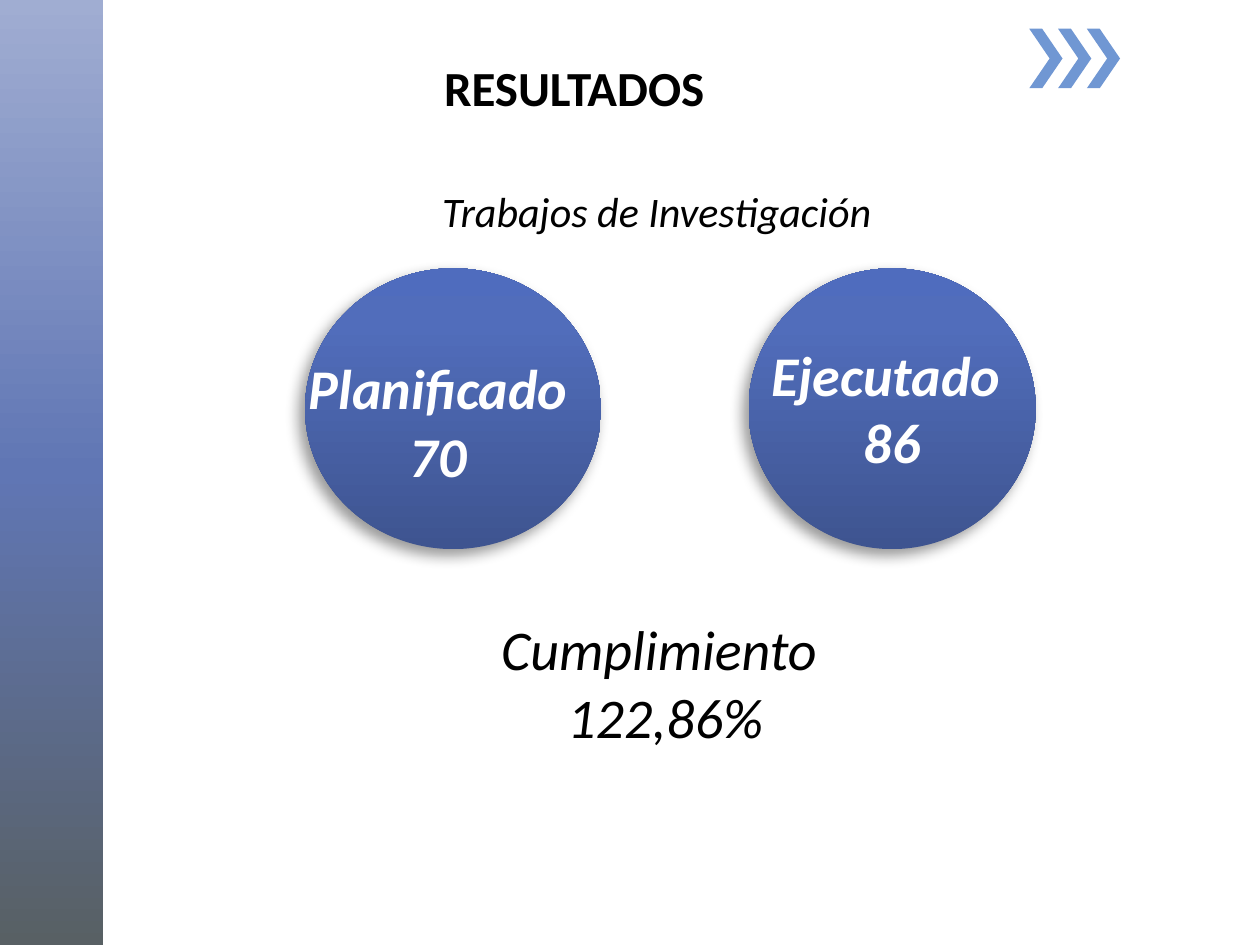
import pptx
import pptx.dml.color
import pptx.enum.shapes
import pptx.enum.text
import pptx.oxml
import pptx.oxml.ns
import pptx.util
from lxml import etree

Cm = pptx.util.Cm
SHAPES = pptx.enum.shapes.MSO_SHAPE
TEXT_WIDTH = 18.39
BAR_STOPS = [(0, "A0ADD2"), (50, "6076B4"), (100, "586064")]
CIRCLE_STOPS = [(0, "3E5490"), (80, "516DBB"), (100, "4F6CBE")]


def color(hex_value):
    """Return the colour for a hex string."""
    return pptx.dml.color.RGBColor.from_string(hex_value)


def add_element(parent, tag, **attributes):
    """Append a DrawingML element and return it."""
    element = etree.SubElement(parent, pptx.oxml.ns.qn(tag))
    for key, value in attributes.items():
        element.set(key, str(value))
    return element


def add_gradient_shape(slide, kind, box, stops, angle):
    """Add a borderless shape with a linear gradient."""
    shape = slide.shapes.add_shape(kind, *map(Cm, box))
    shape.shadow.inherit = False
    shape.line.fill.background()
    shape.fill.gradient()
    shape.fill.gradient_angle = angle
    stop_list = shape._element.spPr.find(".//" + pptx.oxml.ns.qn("a:gsLst"))
    for old_stop in list(stop_list):
        stop_list.remove(old_stop)
    for position, hex_value in stops:
        stop = add_element(stop_list, "a:gs", pos=position * 1000)
        add_element(stop, "a:srgbClr", val=hex_value)
    return shape


def add_circle(slide, left, width):
    """Add a result circle with a soft shadow at its lower left."""
    circle = add_gradient_shape(
        slide, SHAPES.OVAL, (left, 5.41, width, 5.66), CIRCLE_STOPS, 90)
    effects = circle._element.spPr.find(pptx.oxml.ns.qn("a:effectLst"))
    shadow = add_element(
        effects, "a:outerShdw", blurRad=pptx.util.Pt(8),
        dist=pptx.util.Pt(5), dir=135 * 60000, rotWithShape=0)
    shade = add_element(shadow, "a:srgbClr", val="000000")
    add_element(shade, "a:alpha", val=40000)


def add_chevron(slide, left):
    """Add one chevron of the corner ornament."""
    top, width, height, band = 0.58, 0.67, 1.2, 0.26
    middle, bottom = top + height / 2, top + height
    outline = [(left, top), (left + width - band, middle), (left, bottom),
               (left + band, bottom), (left + width, middle),
               (left + band, top)]
    points = [(Cm(x), Cm(y)) for x, y in outline]
    builder = slide.shapes.build_freeform(*points[0])
    builder.add_line_segments(points[1:], close=True)
    chevron = builder.convert_to_shape()
    chevron.shadow.inherit = False
    chevron.fill.solid()
    chevron.fill.fore_color.rgb = color("7097D3")
    chevron.line.fill.background()


def write_lines(frame, lines, size, hex_value="000000", bold=False, italic=True):
    """Write centred lines into a text frame, one paragraph each."""
    frame.word_wrap = True
    frame.auto_size = pptx.enum.text.MSO_AUTO_SIZE.SHAPE_TO_FIT_TEXT
    frame.vertical_anchor = pptx.enum.text.MSO_ANCHOR.TOP
    for index, line in enumerate(lines):
        paragraph = frame.add_paragraph() if index else frame.paragraphs[0]
        paragraph.alignment = pptx.enum.text.PP_ALIGN.CENTER
        run = paragraph.add_run()
        run.text = line
        run.font.name = "Calibri"
        run.font.size = pptx.util.Pt(size)
        run.font.bold = bold
        run.font.italic = italic
        run.font.color.rgb = color(hex_value)


def add_title(slide, text):
    """Place and fill the title placeholder."""
    title = slide.shapes.title
    title.left, title.top = Cm(2.49), Cm(1.04)
    title.width, title.height = Cm(TEXT_WIDTH), Cm(1.45)
    write_lines(title.text_frame, [text], 28, bold=True, italic=False)


def add_label(slide, left, top, height, lines, size, **style):
    """Add a centred text box."""
    label = slide.shapes.add_textbox(
        Cm(left), Cm(top), Cm(TEXT_WIDTH), Cm(height))
    write_lines(label.text_frame, lines, size, **style)


def main():
    """Build the results slide."""
    deck = pptx.Presentation()
    deck.slide_width, deck.slide_height = Cm(25.4), Cm(19.05)
    slide = deck.slides.add_slide(deck.slide_layouts[5])
    add_gradient_shape(
        slide, SHAPES.RECTANGLE, (0, 0, 2.08, 19.05), BAR_STOPS, 270)
    for index in range(3):
        add_chevron(slide, 20.75 + 0.58 * index)
    add_title(slide, "RESULTADOS ")
    add_label(slide, 4.14, 3.61, 1.27, ["Trabajos de Investigación "], 24)
    add_circle(slide, 6.15, 5.97)
    add_circle(slide, 15.09, 5.79)
    add_label(slide, 4.22, 12.27, 3, ["Cumplimiento ", "122,86%"], 32)
    results = [(-0.23, 7.01, ["Planificado ", "70 "]),
               (8.79, 6.73, ["Ejecutado ", "86"])]
    for left, top, lines in results:
        add_label(slide, left, top, 3, lines, 32, hex_value="FFFFFF", bold=True)
    deck.save("out.pptx")


if __name__ == "__main__":
    main()
